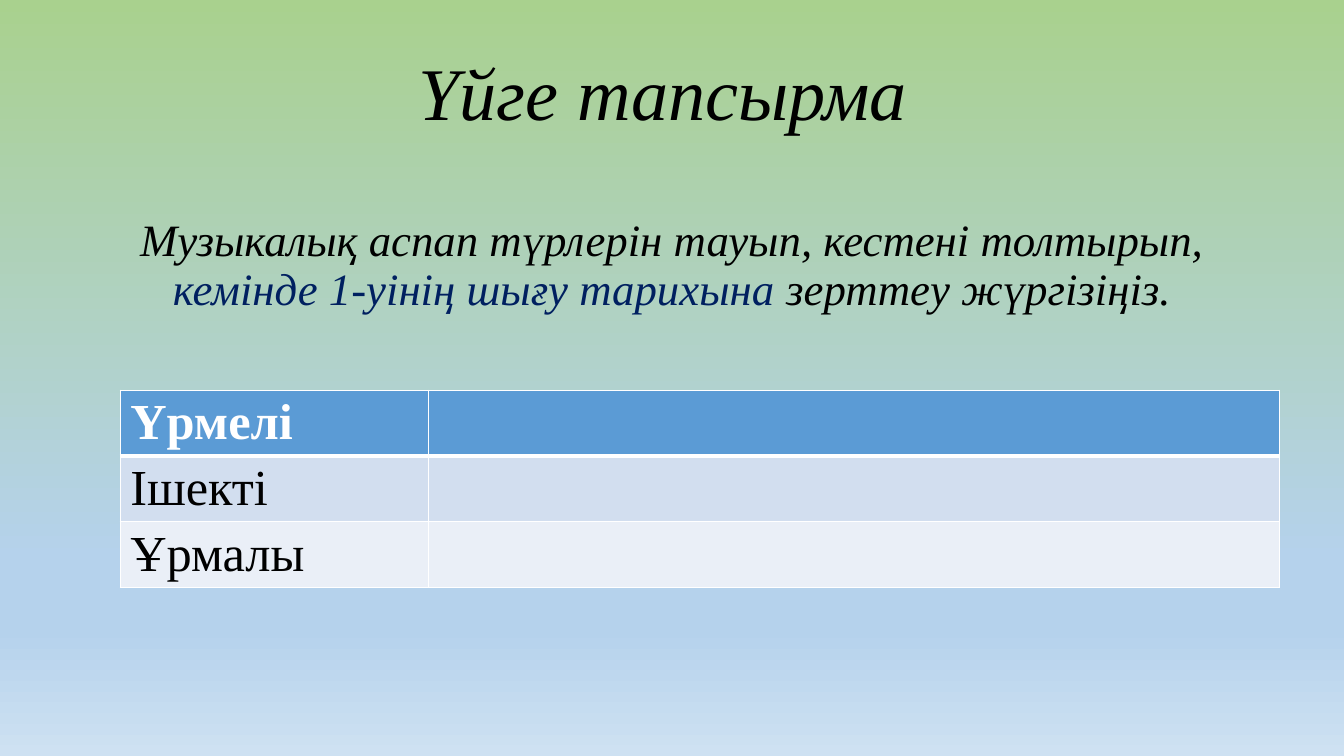
from copy import deepcopy
from dataclasses import dataclass

from lxml.etree import SubElement
from pptx import Presentation
from pptx.dml.color import RGBColor
from pptx.enum.text import MSO_ANCHOR, MSO_AUTO_SIZE, PP_ALIGN
from pptx.oxml.ns import qn
from pptx.util import Cm, Pt


@dataclass(frozen=True)
class Theme:
    """Colours, font and type sizes of the slide."""
    font: str = "Times New Roman"
    heading_size: int = 53
    task_size: int = 32
    table_size: int = 36
    ink: str = "000000"
    accent: str = "002060"
    white: str = "FFFFFF"
    row_fills: tuple = ("5B9BD5", "D2DEEF", "EAEFF7")
    sky: tuple = ((0, "A9D18E"), (0.74, "B5D2EC"), (0.83, "B5D2EC"), (1, "CEE1F2"))


THEME = Theme()
INSTRUMENT_KINDS = ("Үрмелі", "Ішекті", "Ұрмалы")
TASK = (
    ("Музыкалық аспап түрлерін тауып, кестені толтырып, ", THEME.ink),
    ("кемінде 1-уінің шығу тарихына ", THEME.accent),
    ("зерттеу жүргізіңіз.", THEME.ink),
)


def apply_format(target, values):
    """Set every attribute named in values on target."""
    for attribute, value in values.items():
        setattr(target, attribute, value)


def add_words(paragraph, words, size, colour, **style):
    """Append one formatted run to a paragraph."""
    run = paragraph.add_run()
    run.text = words
    apply_format(run.font, {"name": THEME.font, "size": Pt(size), **style})
    run.font.color.rgb = RGBColor.from_string(colour)


def paint_sky(slide):
    """Fill the slide background with the vertical gradient."""
    fill = slide.background.fill
    fill.gradient()
    fill.gradient_angle = 270
    stop_list = slide.element.find(".//" + qn("a:gsLst"))
    while len(stop_list) < len(THEME.sky):
        stop_list.append(deepcopy(stop_list[0]))
    for stop, (position, colour) in zip(fill.gradient_stops, THEME.sky):
        stop.position = position
        stop.color.rgb = RGBColor.from_string(colour)


def write_title(title):
    """Place the title and write the heading and the task."""
    apply_format(title, {"left": Cm(2.33), "top": Cm(1.01),
                         "width": Cm(29.21), "height": Cm(7.34)})
    frame = title.text_frame
    apply_format(frame, {"word_wrap": True, "auto_size": MSO_AUTO_SIZE.NONE,
                         "vertical_anchor": MSO_ANCHOR.MIDDLE})
    heading, task = frame.paragraphs[0], frame.add_paragraph()
    for paragraph, gap in ((heading, 0), (task, 58)):
        apply_format(paragraph, {"alignment": PP_ALIGN.CENTER, "line_spacing": 0.9,
                                 "space_before": Pt(gap)})
    add_words(heading, "Үйге тапсырма ", THEME.heading_size, THEME.ink, italic=True)
    for words, colour in TASK:
        add_words(task, words, THEME.task_size, colour, italic=True)


def border_cell(cell, bottom_width):
    """Draw white borders around a cell."""
    properties = cell._tc.get_or_add_tcPr()
    for side, width in (("L", 1), ("R", 1), ("T", 1), ("B", bottom_width)):
        line = SubElement(properties, qn(f"a:ln{side}"), w=str(Pt(width)))
        fill = SubElement(line, qn("a:solidFill"))
        SubElement(fill, qn("a:srgbClr"), val=THEME.white)


def add_instrument_table(slide):
    """Add the table of instrument kinds with blank answer cells."""
    row_height = Cm(1.65)
    table = slide.shapes.add_table(len(INSTRUMENT_KINDS), 2, Cm(3.03), Cm(9.83), Cm(29.21),
                                   row_height * len(INSTRUMENT_KINDS)).table
    for column, width in zip(table.columns, (7.77, 21.44)):
        column.width = Cm(width)
    for index, (row, kind) in enumerate(zip(table.rows, INSTRUMENT_KINDS)):
        row.height = row_height
        is_header = index == 0
        for cell in row.cells:
            border_cell(cell, 3 if is_header else 1)
            cell.fill.solid()
            cell.fill.fore_color.rgb = RGBColor.from_string(THEME.row_fills[index])
        add_words(row.cells[0].text_frame.paragraphs[0], kind, THEME.table_size,
                  THEME.white if is_header else THEME.ink, bold=is_header)


def main():
    """Build the homework slide and save it."""
    deck = Presentation()
    apply_format(deck, {"slide_width": Cm(33.87), "slide_height": Cm(19.05)})
    slide = deck.slides.add_slide(deck.slide_layouts[5])
    paint_sky(slide)
    write_title(slide.shapes.title)
    add_instrument_table(slide)
    deck.save("out.pptx")


if __name__ == "__main__":
    main()
